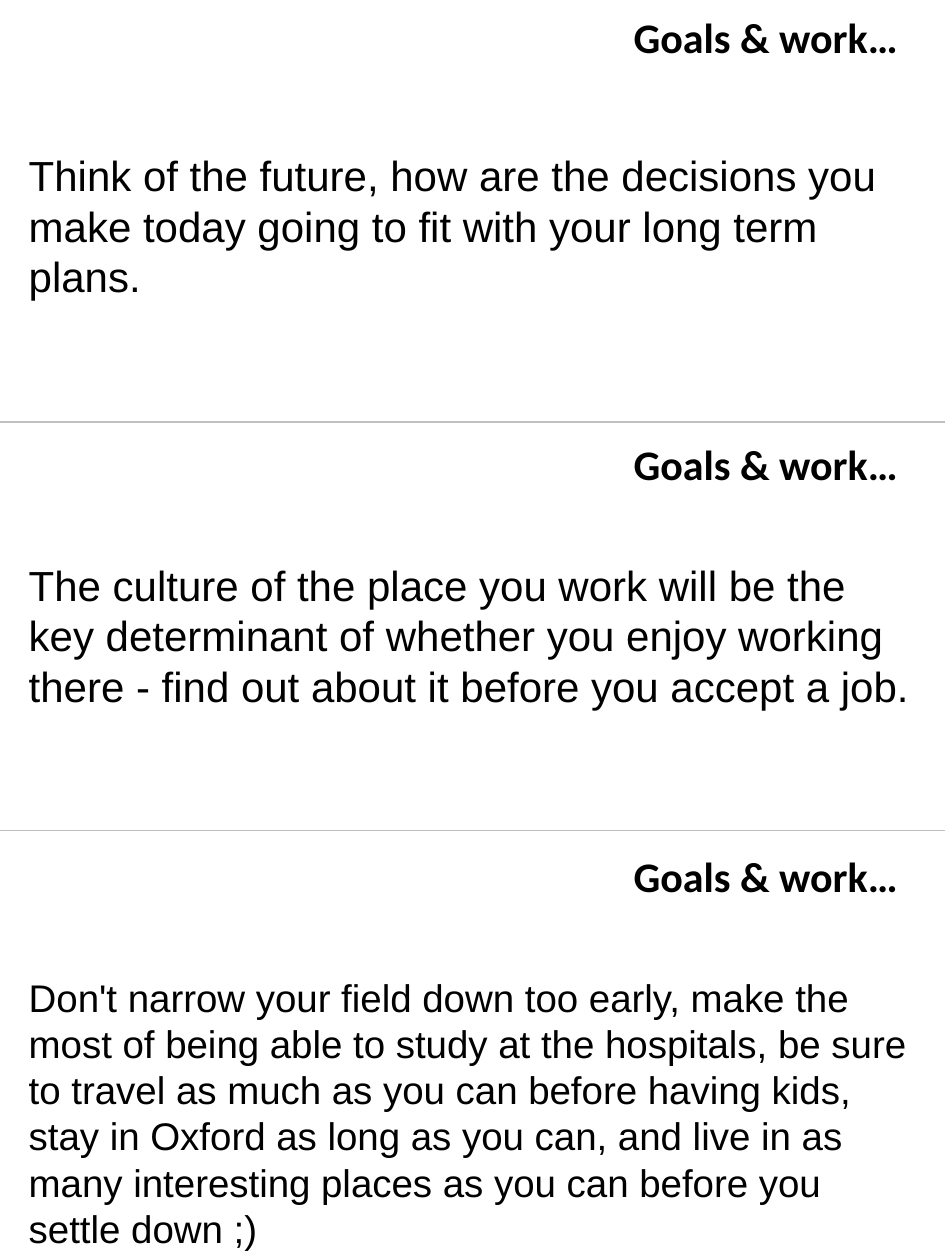
from pptx import Presentation
from pptx.dml.color import RGBColor
from pptx.enum import shapes, text
from pptx.oxml.ns import qn
from pptx.util import Inches, Pt

BLACK = RGBColor(0x00, 0x00, 0x00)
WHITE = RGBColor(0xFF, 0xFF, 0xFF)
RULE_GREY = RGBColor(0xBF, 0xBF, 0xBF)

PAGE_WIDTH, PAGE_HEIGHT = Inches(7.5), Inches(10)
HEADING = "Goals & work…"

# Heading top, advice top, advice size, advice
CARDS = [
    (0.04, 1.14, 24, "Think of the future, how are the decisions you make today "
                     "going to fit with your long term plans."),
    (3.43, 4.39, 24, "The culture of the place you work will be the key determinant "
                     "of whether you enjoy working there - find out about it before "
                     "you accept a job."),
    (6.7, 7.68, 22, "Don't narrow your field down too early, make the most of being "
                    "able to study at the hospitals, be sure to travel as much as you "
                    "can before having kids, stay in Oxford as long as you can, and "
                    "live in as many interesting places as you can before you settle "
                    "down ;)"),
]
DIVIDER_TOPS = [3.35, 6.59]


def write(box, words, size, font, bold=False):
    frame = box.text_frame
    frame.word_wrap = True
    frame.vertical_anchor = text.MSO_ANCHOR.TOP
    para = frame.paragraphs[0]
    para.alignment = text.PP_ALIGN.LEFT
    span = para.add_run()
    span.text = words
    span.font.name = font
    span.font.size = Pt(size)
    span.font.bold = bold
    span.font.color.rgb = BLACK


def add_card(page, left, width, heading_top, advice_top, size, advice):
    """Place a right-hand heading and the advice below it."""
    body = page.shapes.add_textbox(left, advice_top, width, Inches(2.2))
    write(body, advice, size, "Arial")

    heading_width = Inches(2.44)
    heading = page.shapes.add_textbox(left + width - heading_width, heading_top,
                                      heading_width, Inches(0.5))
    write(heading, HEADING, 24, "Calibri", bold=True)
    heading.text_frame.auto_size = text.MSO_AUTO_SIZE.SHAPE_TO_FIT_TEXT


def add_divider(page, top):
    line = page.shapes.add_connector(shapes.MSO_CONNECTOR.STRAIGHT,
                                     0, top, PAGE_WIDTH, top)
    line.line.color.rgb = RULE_GREY
    line.line.width = Pt(0.75)
    properties = line._element.spPr
    properties.append(properties.makeelement(qn("a:effectLst"), {}))


def main():
    deck = Presentation()
    deck.slide_width, deck.slide_height = PAGE_WIDTH, PAGE_HEIGHT
    page = deck.slides.add_slide(deck.slide_layouts[6])
    page.background.fill.solid()
    page.background.fill.fore_color.rgb = WHITE

    for heading_top, advice_top, size, advice in CARDS:
        add_card(page, Inches(0.13), Inches(7.24), Inches(heading_top),
                 Inches(advice_top), size, advice)
    for top in DIVIDER_TOPS:
        add_divider(page, Inches(top))

    deck.save("out.pptx")


if __name__ == "__main__":
    main()
